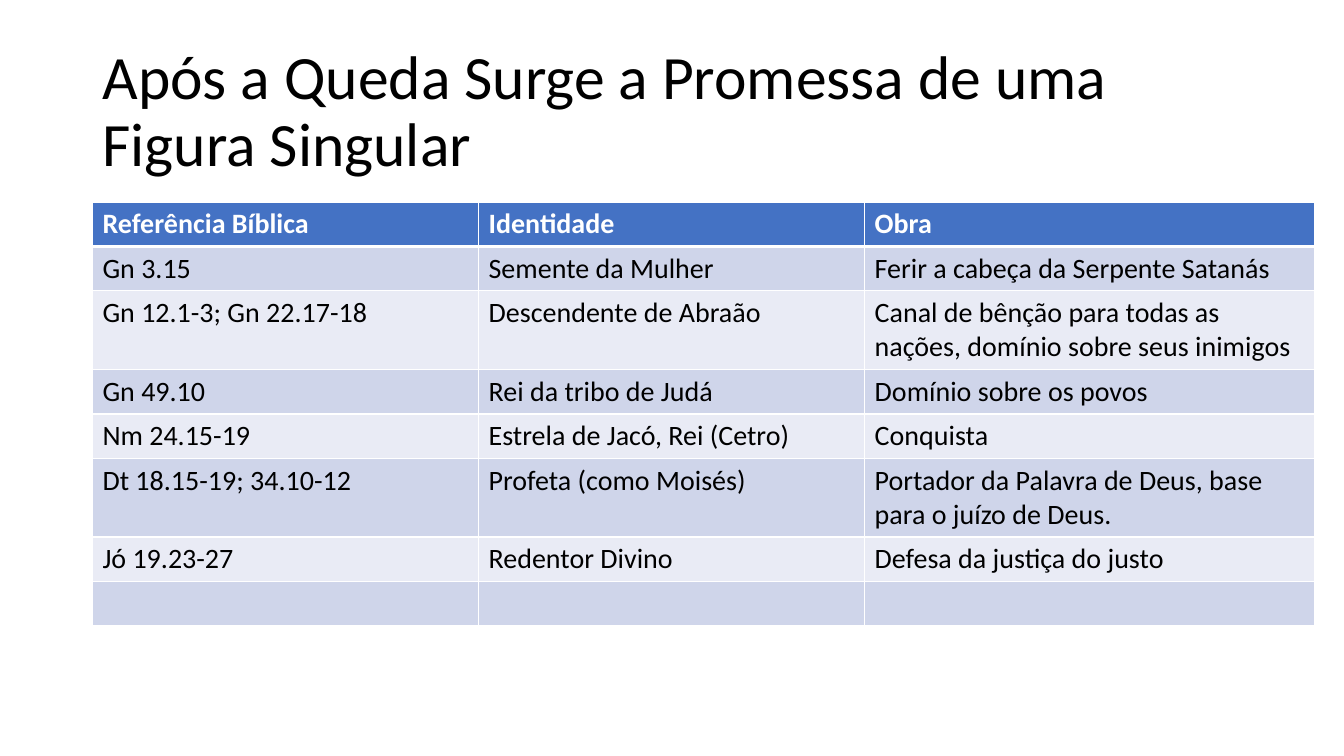
from pptx import Presentation
from pptx.dml.color import RGBColor
from pptx.enum.text import MSO_ANCHOR, MSO_AUTO_SIZE, PP_ALIGN
from pptx.oxml.xmlchemy import OxmlElement
from pptx.util import Cm, Pt

BLACK = RGBColor(0x00, 0x00, 0x00)
WHITE = RGBColor(0xFF, 0xFF, 0xFF)
BLUE = RGBColor(0x44, 0x72, 0xC4)
BAND_DARK = RGBColor(0xCF, 0xD5, 0xEA)
BAND_LIGHT = RGBColor(0xE9, 0xEB, 0xF5)

TITLE = "Após a Queda Surge a Promessa de uma Figura Singular"
PROMISES = [
    ("Referência Bíblica", "Identidade", "Obra"),
    ("Gn 3.15", "Semente da Mulher", "Ferir a cabeça da Serpente Satanás"),
    ("Gn 12.1-3; Gn 22.17-18", "Descendente de Abraão",
     "Canal de bênção para todas as nações, domínio sobre seus inimigos"),
    ("Gn 49.10", "Rei da tribo de Judá", "Domínio sobre os povos"),
    ("Nm 24.15-19", "Estrela de Jacó, Rei (Cetro)", "Conquista"),
    ("Dt 18.15-19; 34.10-12", "Profeta (como Moisés)",
     "Portador da Palavra de Deus, base para o juízo de Deus."),
    ("Jó 19.23-27", "Redentor Divino", "Defesa da justiça do justo"),
    ("", "", ""),
]
COL_WIDTHS = [9.73, 9.73, 11.33]
ROW_HEIGHTS = [1.04, 1.04, 1.42] + [1.04] * 5


def set_attrs(obj, values):
    for name, value in values.items():
        setattr(obj, name, value)


class SlideBuilder:
    font = "Calibri"
    title_size = Pt(44)
    cell_size = Pt(20)

    def __init__(self, prs):
        self.s = prs.slides.add_slide(prs.slide_layouts[5])

    def format_run(self, r, size, color, bold=False):
        set_attrs(r.font, {"name": self.font, "size": size, "bold": bold})
        r.font.color.rgb = color

    def title(self, text, left, top, width, height):
        sp = self.s.shapes.title
        set_attrs(sp, {"left": Cm(left), "top": Cm(top),
                       "width": Cm(width), "height": Cm(height)})
        tf = sp.text_frame
        set_attrs(tf, {"word_wrap": True, "auto_size": MSO_AUTO_SIZE.NONE,
                       "vertical_anchor": MSO_ANCHOR.MIDDLE})
        p = tf.paragraphs[0]
        set_attrs(p, {"alignment": PP_ALIGN.LEFT, "line_spacing": 0.9})
        r = p.add_run()
        r.text = text
        self.format_run(r, self.title_size, BLACK)

    def borders(self, cell, widths):
        """Draw white cell borders; they precede the fill in the cell XML."""
        tc_pr = cell._tc.get_or_add_tcPr()
        for i, (side, width) in enumerate(widths.items()):
            ln = OxmlElement(f"a:ln{side}")
            ln.set("w", str(Pt(width)))
            fill = OxmlElement("a:solidFill")
            color = OxmlElement("a:srgbClr")
            color.set("val", str(WHITE))
            fill.append(color)
            ln.append(fill)
            tc_pr.insert(i, ln)

    def cell(self, cell, text, fill, color, bold):
        cell.fill.solid()
        cell.fill.fore_color.rgb = fill
        p = cell.text_frame.paragraphs[0]
        if text:
            r = p.add_run()
            r.text = text
            self.format_run(r, self.cell_size, color, bold)
        else:
            # An empty cell keeps the line height of the others
            end = OxmlElement("a:endParaRPr")
            end.set("sz", str(int(self.cell_size.pt * 100)))
            p._p.append(end)

    def table(self, rows, left, top, col_widths, row_heights):
        frame = self.s.shapes.add_table(
            len(rows), len(col_widths), Cm(left), Cm(top),
            Cm(sum(col_widths)), Cm(sum(row_heights)))
        tbl = frame.table
        for col, width in zip(tbl.columns, col_widths):
            col.width = Cm(width)
        for row, height in zip(tbl.rows, row_heights):
            row.height = Cm(height)
        for i, texts in enumerate(rows):
            header = i == 0
            band = BAND_DARK if i % 2 else BAND_LIGHT
            for j, text in enumerate(texts):
                cell = tbl.cell(i, j)
                self.cell(cell, text, BLUE if header else band,
                          WHITE if header else BLACK, header)
                self.borders(cell, {"L": 1, "R": 1, "T": 3 if i == 1 else 1,
                                    "B": 3 if header else 1})


def main():
    prs = Presentation()
    set_attrs(prs, {"slide_width": Cm(33.87), "slide_height": Cm(19.05)})
    slide = SlideBuilder(prs)

    # Heading
    slide.title(TITLE, 2.33, 1.01, 29.21, 3.68)

    # Promises: reference, identity and work
    slide.table(PROMISES, 2.33, 5.09, COL_WIDTHS, ROW_HEIGHTS)

    prs.save("out.pptx")


if __name__ == "__main__":
    main()
